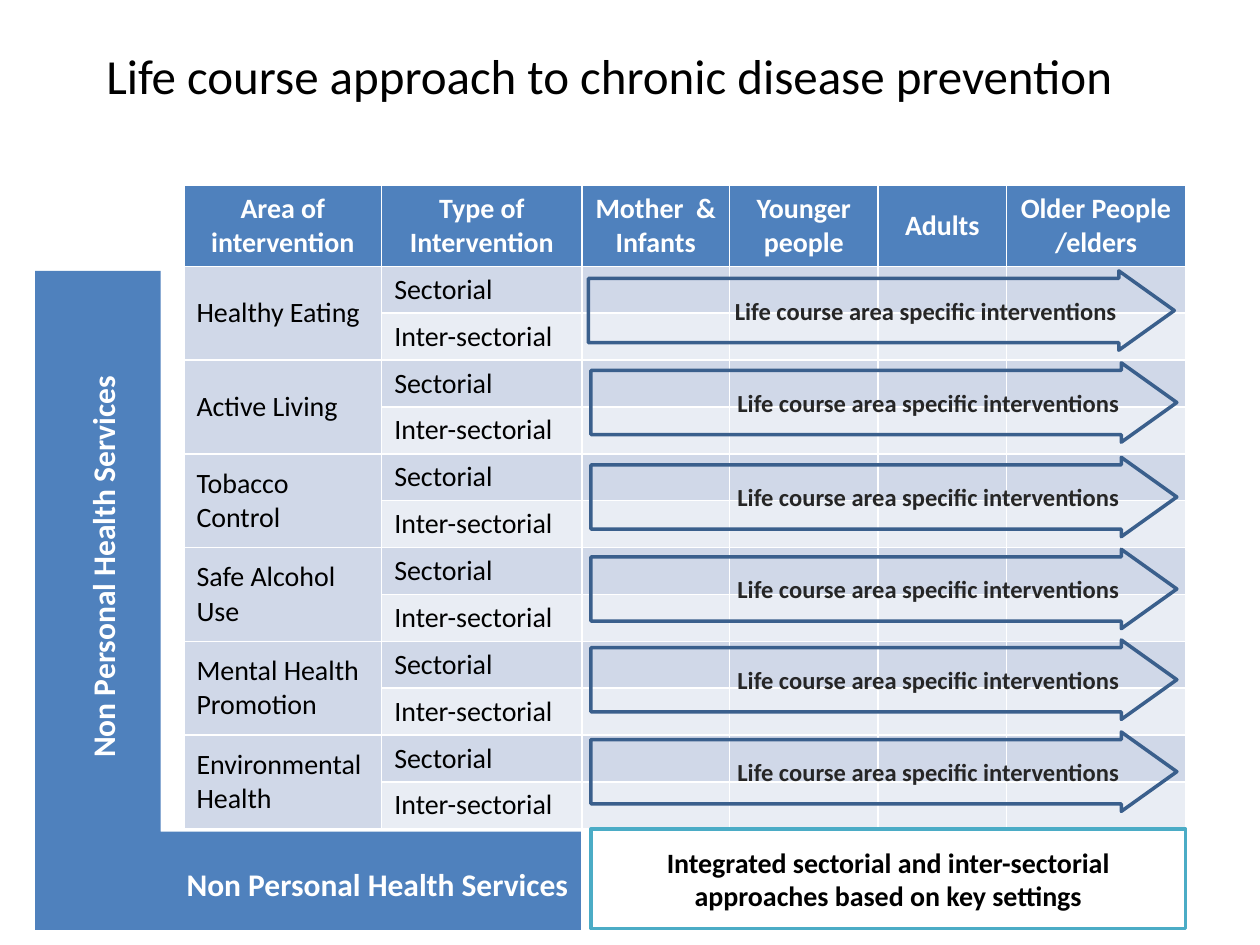
import pptx
import pptx.util
from lxml import etree
from pptx.dml.color import RGBColor
from pptx.enum.shapes import MSO_SHAPE
from pptx.enum.text import MSO_ANCHOR, PP_ALIGN
from pptx.oxml.ns import qn

Inches, Pt = pptx.util.Inches, pptx.util.Pt

# Content
TITLE = "Life course approach to chronic disease prevention"
HEADERS = ["Area of intervention", "Type of Intervention", "Mother  & Infants",
           "Younger people", "Adults", "Older People /elders"]
AREAS = ["Healthy Eating", "Active Living", "Tobacco Control",
         "Safe Alcohol Use", "Mental Health Promotion", "Environmental Health"]
TYPES = ["Sectorial", "Inter-sectorial"]
ARROW_TEXT = "Life course area specific interventions"
SETTINGS_TEXT = "Integrated sectorial and inter-sectorial approaches based on key settings"
SERVICES_TEXT = "Non Personal Health Services"

# Layout
COLUMN_WIDTHS = [1.57, 1.59, 1.17, 1.18, 1.02, 1.42]
HEADER_HEIGHT, ROW_HEIGHT = 0.64, 0.37
ARROW_SPOTS = [(4.67, 2.15), (4.69, 2.88), (4.69, 3.63),
               (4.69, 4.36), (4.69, 5.08), (4.69, 5.81)]
SERVICES_SPOTS = [(1.38, 6.82, 0), (-0.8, 4.3, 270)]

# Colours
BLACK = RGBColor(0x00, 0x00, 0x00)
WHITE = RGBColor(0xFF, 0xFF, 0xFF)
CHARCOAL = RGBColor(0x26, 0x26, 0x26)
BLUE = RGBColor(0x4F, 0x81, 0xBD)
DARK_BLUE = RGBColor(0x3A, 0x5F, 0x8C)
TEAL = RGBColor(0x4B, 0xAC, 0xC6)
BANDS = [RGBColor(0xD0, 0xD8, 0xE8), RGBColor(0xE9, 0xED, 0xF4)]


def write(frame, text, size, color, bold=False, align=PP_ALIGN.LEFT):
    para = frame.paragraphs[0]
    para.alignment = align
    span = para.add_run()
    span.text = text
    for name, value in {"name": "Calibri", "size": Pt(size), "bold": bold}.items():
        setattr(span.font, name, value)
    span.font.color.rgb = color
    return para


def add_shape(page, kind, place, fill=None, line=None):
    shape = page.shapes.add_shape(kind, *map(Inches, place))
    shape.shadow.inherit = False
    if fill is None:
        shape.fill.background()
    else:
        shape.fill.solid()
        shape.fill.fore_color.rgb = fill
    if line is None:
        shape.line.fill.background()
    else:
        shape.line.color.rgb = line
        shape.line.width = Pt(2)
    shape.text_frame.word_wrap = True
    shape.text_frame.vertical_anchor = MSO_ANCHOR.MIDDLE
    return shape


def fill_cell(cell, fill, text="", color=BLACK, bold=False,
              align=PP_ALIGN.LEFT, anchor=MSO_ANCHOR.TOP):
    cell.fill.solid()
    cell.fill.fore_color.rgb = fill
    cell.vertical_anchor = anchor
    if text:
        write(cell.text_frame, text, 16, color, bold, align)
    else:
        # Keeps empty cells from stretching their row
        para = cell.text_frame.paragraphs[0]
        etree.SubElement(para._p, qn("a:endParaRPr"), sz="1600")


def add_table(page):
    row_count = 1 + len(AREAS) * len(TYPES)
    height = HEADER_HEIGHT + ROW_HEIGHT * (row_count - 1)
    table = page.shapes.add_table(
        row_count, len(HEADERS), Inches(1.46), Inches(1.47),
        Inches(sum(COLUMN_WIDTHS)), Inches(height)).table
    for column, width in zip(table.columns, COLUMN_WIDTHS):
        column.width = Inches(width)
    for index, row in enumerate(table.rows):
        row.height = Inches(ROW_HEIGHT if index else HEADER_HEIGHT)

    for index, header in enumerate(HEADERS):
        fill_cell(table.cell(0, index), BLUE, header, WHITE, True,
                  PP_ALIGN.CENTER, MSO_ANCHOR.MIDDLE)
    for area_index, area in enumerate(AREAS):
        top = 1 + area_index * len(TYPES)
        area_cell = table.cell(top, 0)
        area_cell.merge(table.cell(top + len(TYPES) - 1, 0))
        fill_cell(area_cell, BANDS[0], area, anchor=MSO_ANCHOR.MIDDLE)
        for offset, (kind, band) in enumerate(zip(TYPES, BANDS)):
            fill_cell(table.cell(top + offset, 1), band, kind)
            for column in range(2, len(HEADERS)):
                fill_cell(table.cell(top + offset, column), band)


def main():
    deck = pptx.Presentation()
    deck.slide_width, deck.slide_height = Inches(10), Inches(7.5)
    page = deck.slides.add_slide(deck.slide_layouts[5])

    # Title
    title = page.shapes.title
    title.left, title.top, title.width, title.height = map(Inches, (0.26, 0.29, 9.15, 0.55))
    title.text_frame.vertical_anchor = MSO_ANCHOR.MIDDLE
    para = write(title.text_frame, TITLE, 28, BLACK, align=PP_ALIGN.CENTER)
    para.line_spacing = Pt(38)

    add_table(page)

    # One arrow across the life stages for each area
    for left, top in ARROW_SPOTS:
        arrow = add_shape(page, MSO_SHAPE.RIGHT_ARROW, (left, top, 4.65, 0.63), line=DARK_BLUE)
        arrow.adjustments[0], arrow.adjustments[1] = 0.81, 0.7
        write(arrow.text_frame, ARROW_TEXT, 14, CHARCOAL, True, PP_ALIGN.RIGHT)

    # Key settings box
    settings = add_shape(page, MSO_SHAPE.RECTANGLE, (4.69, 6.58, 4.72, 0.79), WHITE, TEAL)
    write(settings.text_frame, SETTINGS_TEXT, 16, BLACK, True, PP_ALIGN.CENTER)

    # Services band around the table, labelled on both arms
    band = add_shape(page, MSO_SHAPE.CORNER, (0.28, 2.15, 4.33, 5.23), BLUE)
    band.adjustments[0], band.adjustments[1] = 0.18, 0.23
    for left, top, rotation in SERVICES_SPOTS:
        box = page.shapes.add_textbox(*map(Inches, (left, top, 3.23, 0.4)))
        box.rotation = rotation
        box.text_frame.word_wrap = True
        write(box.text_frame, SERVICES_TEXT, 18, WHITE, True, PP_ALIGN.RIGHT)

    deck.save("out.pptx")


if __name__ == "__main__":
    main()
